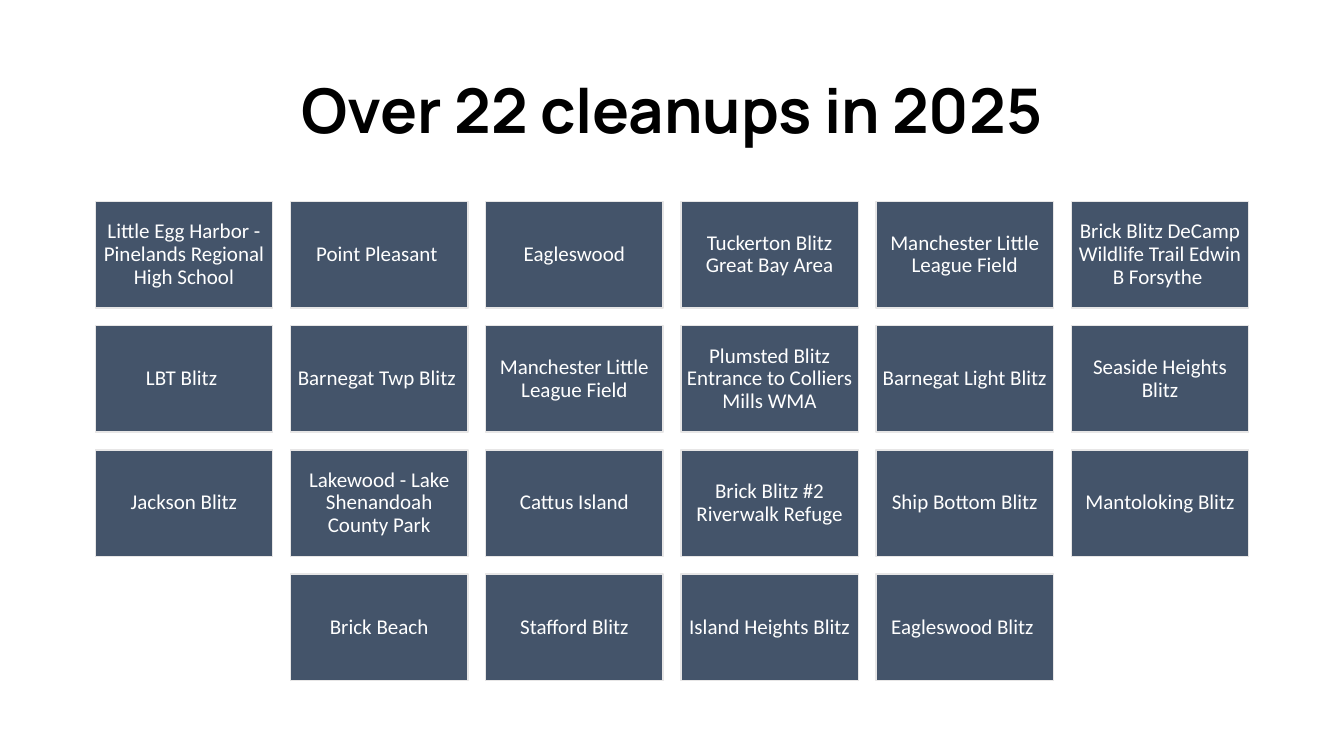
from pptx import Presentation
from pptx.dml.color import RGBColor
from pptx.enum.shapes import MSO_SHAPE
from pptx.enum.text import MSO_ANCHOR, PP_ALIGN
from pptx.util import Inches, Pt

# Content
TITLE = "Over 22 cleanups in 2025"
CLEANUP_ROWS = [
    ["Little Egg Harbor - Pinelands Regional High School", "Point Pleasant ",
     "Eagleswood", "Tuckerton Blitz Great Bay Area",
     "Manchester Little League Field",
     "Brick Blitz DeCamp Wildlife Trail Edwin B Forsythe "],
    ["LBT Blitz ", "Barnegat Twp Blitz ", "Manchester Little League Field",
     "Plumsted Blitz Entrance to Colliers Mills WMA",
     "Barnegat Light Blitz", "Seaside Heights Blitz"],
    ["Jackson Blitz", "Lakewood - Lake Shenandoah County Park",
     "Cattus Island", "Brick Blitz #2 Riverwalk Refuge",
     "Ship Bottom Blitz", "Mantoloking Blitz"],
    ["Brick Beach", "Stafford Blitz", "Island Heights Blitz",
     "Eagleswood Blitz "],
]
COLORS = {"title": "000000", "tile": "44546A", "border": "E7E6E6",
          "label": "FFFFFF"}

# Layout, in inches
SLIDE_WIDTH, SLIDE_HEIGHT = 13.33, 7.5
GRID_TOP = 2
TILE_WIDTH = 1.76
TILE_HEIGHT = TILE_WIDTH * 0.6
GAP = TILE_WIDTH * 0.1
TILE_INSET = 0.06


def write(shape, text, *, font, size, color, bold=False, inset=None):
    frame = shape.text_frame
    frame.word_wrap = True
    frame.vertical_anchor = MSO_ANCHOR.MIDDLE
    if inset is not None:
        frame.margin_left = frame.margin_right = Inches(inset)
        frame.margin_top = frame.margin_bottom = Inches(inset)
    paragraph = frame.paragraphs[0]
    paragraph.alignment = PP_ALIGN.CENTER
    paragraph.line_spacing = 0.9
    run = paragraph.add_run()
    run.text = text
    run.font.name = font
    run.font.size = Pt(size)
    run.font.bold = bold
    run.font.color.rgb = RGBColor.from_string(COLORS[color])


def add_tile(slide, cleanup, left, top):
    tile = slide.shapes.add_shape(
        MSO_SHAPE.RECTANGLE, Inches(left), Inches(top),
        Inches(TILE_WIDTH), Inches(TILE_HEIGHT))
    tile.shadow.inherit = False
    tile.fill.solid()
    tile.fill.fore_color.rgb = RGBColor.from_string(COLORS["tile"])
    tile.line.color.rgb = RGBColor.from_string(COLORS["border"])
    tile.line.width = Pt(1)
    write(tile, cleanup, font="Calibri", size=15, color="label",
          inset=TILE_INSET)


def main():
    deck = Presentation()
    deck.slide_width = Inches(SLIDE_WIDTH)
    deck.slide_height = Inches(SLIDE_HEIGHT)
    slide = deck.slides.add_slide(deck.slide_layouts[5])

    # Title
    title = slide.shapes.title
    title.left, title.top = Inches(0.92), Inches(0.4)
    title.width, title.height = Inches(11.5), Inches(1.45)
    write(title, TITLE, font="Manrope", size=44, color="title", bold=True)

    # Cleanup tiles, each row centred on the slide
    for row, cleanups in enumerate(CLEANUP_ROWS):
        row_width = len(cleanups) * (TILE_WIDTH + GAP) - GAP
        row_left = (SLIDE_WIDTH - row_width) / 2
        top = GRID_TOP + row * (TILE_HEIGHT + GAP)
        for column, cleanup in enumerate(cleanups):
            add_tile(slide, cleanup,
                     row_left + column * (TILE_WIDTH + GAP), top)

    deck.save("out.pptx")


if __name__ == "__main__":
    main()
